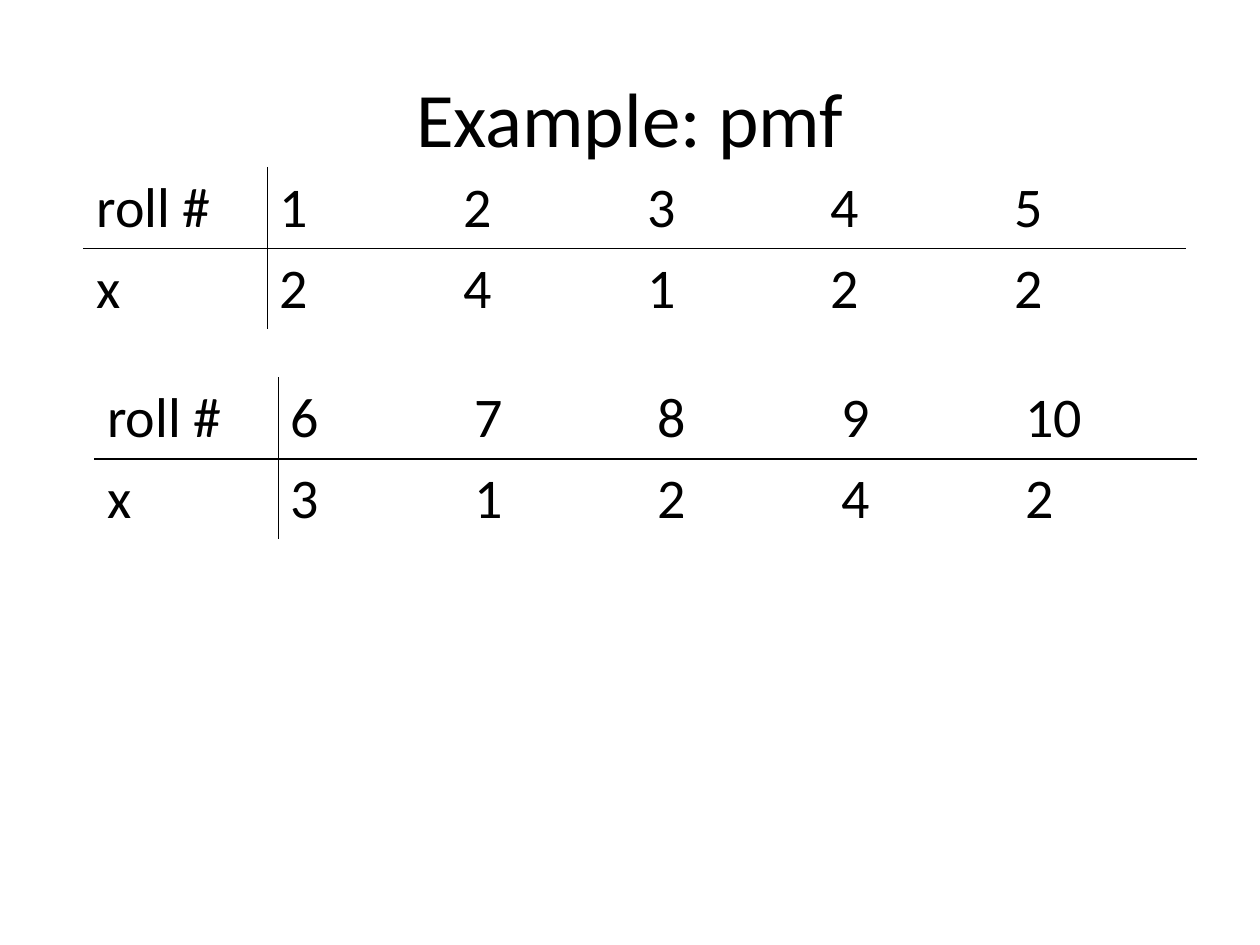
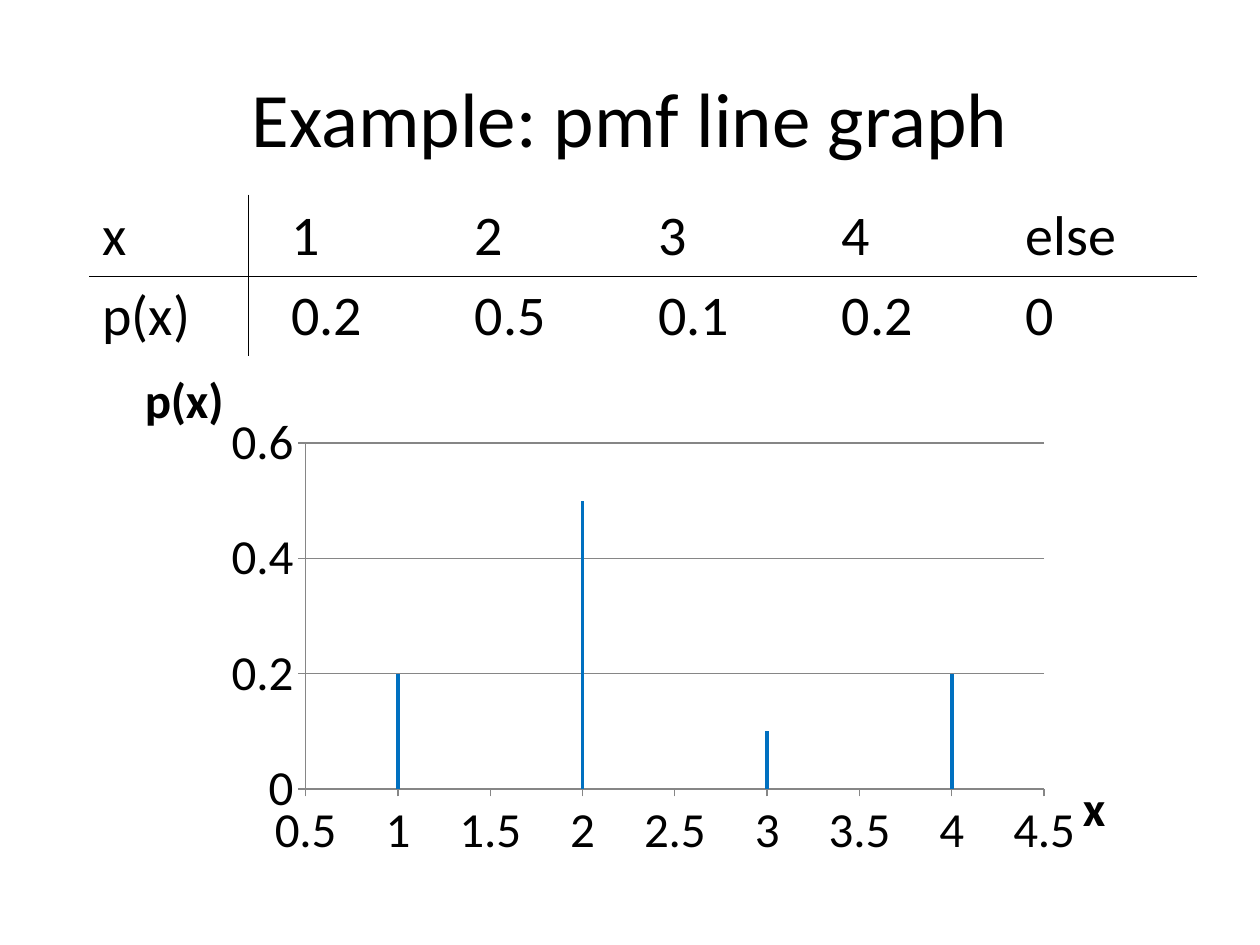
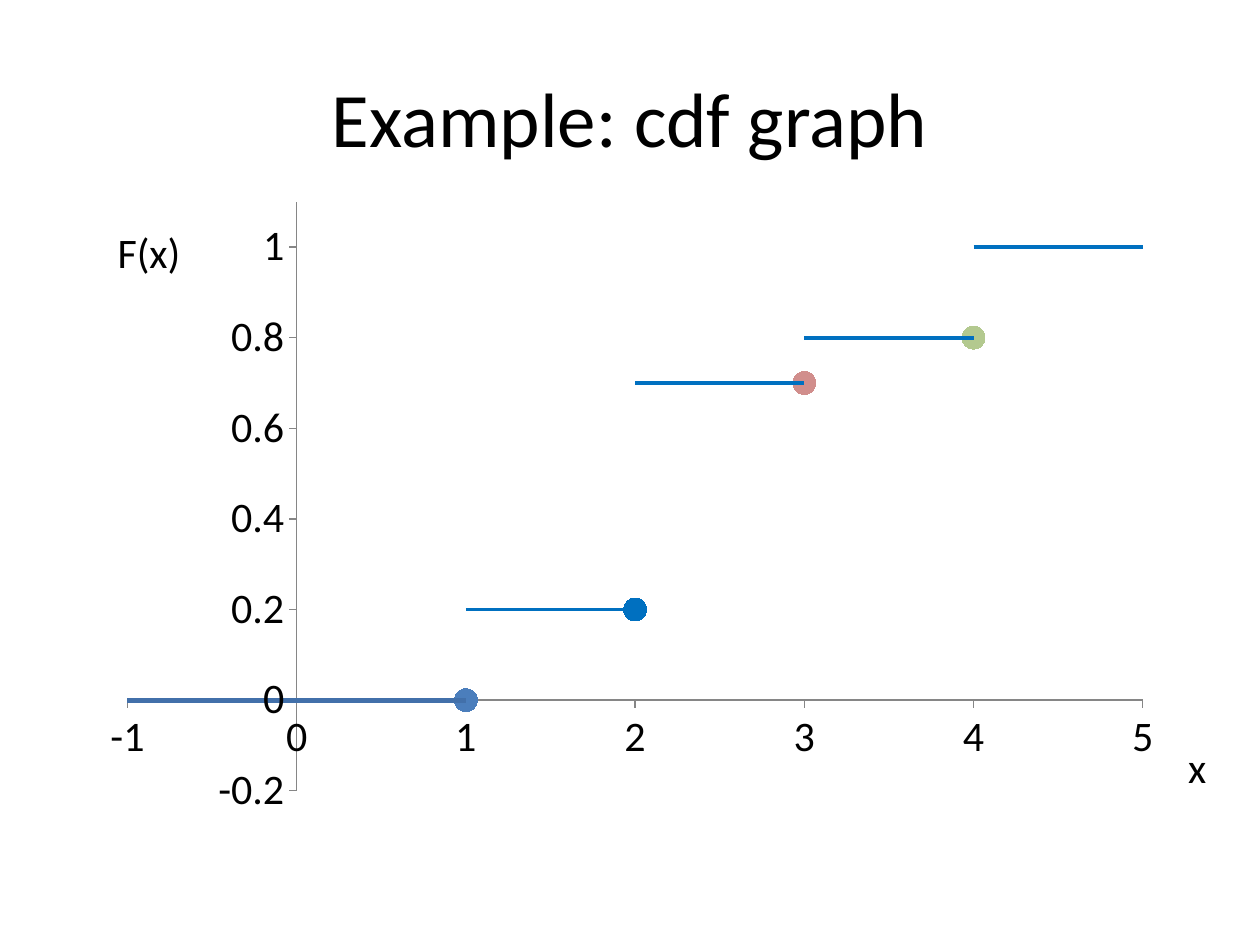
from lxml.etree import SubElement as Sub, Element as Elem
from pptx import Presentation as Deck
from pptx.chart.data import XyChartData as Data
from pptx.dml.color import RGBColor as RGB
from pptx.enum.chart import XL_CHART_TYPE as Kind, XL_MARKER_STYLE as Mark, XL_TICK_MARK as Tick
from pptx.enum.text import MSO_ANCHOR as Anchor, PP_ALIGN as Align
from pptx.oxml.ns import qn
from pptx.util import Cm, Pt

BLACK = RGB(0, 0, 0)
WHITE = RGB(255, 255, 255)
GREY = RGB(0x86, 0x86, 0x86)
BLUE = RGB(0x00, 0x70, 0xC0)
STEEL = RGB(0x42, 0x70, 0xAA)
DOT = RGB(0x4B, 0x7E, 0xBC)
ROSE = RGB(0xD1, 0x8E, 0x8C)
SAGE = RGB(0xB3, 0xC9, 0x8F)
FACE = "Calibri"
ROW = 1.63


def write(frame, text, size, align=Align.LEFT):
    """Fill a text frame with one paragraph in the deck's style."""
    para = frame.paragraphs[0]
    para.alignment = align
    run = para.add_run()
    run.text = text
    for key, val in {"name": FACE, "size": Pt(size)}.items():
        setattr(run.font, key, val)
    run.font.color.rgb = BLACK


def grid(slide, left, top, widths, rows):
    """Add a table with one rule under the head row and one after the first column."""
    frame = slide.shapes.add_table(len(rows), len(widths), Cm(left), Cm(top),
                                   Cm(sum(widths)), Cm(ROW * len(rows)))
    table = frame.table
    for flag in ("first_row", "horz_banding"):
        setattr(table, flag, False)
    for col, width in zip(table.columns, widths):
        col.width = Cm(width)
    for r, row in enumerate(rows):
        table.rows[r].height = Cm(ROW)
        for c, text in enumerate(row):
            cell = table.cell(r, c)
            cell.fill.background()
            if text:
                write(cell.text_frame, text, 32)
    # Cell borders
    for n, props in enumerate(frame.element.iter(qn("a:tcPr"))):
        r, c = divmod(n, len(widths))
        sides = {"L": c == 1, "R": c == 0, "T": r == 1, "B": r == 0}
        for i, (side, dark) in enumerate(sides.items()):
            line = Elem(qn("a:ln" + side), w=str(Pt(1)))
            fill = Sub(line, qn("a:solidFill"))
            Sub(fill, qn("a:srgbClr"), val=str(BLACK if dark else WHITE))
            props.insert(i, line)


deck = Deck()
deck.slide_width, deck.slide_height = Cm(25.4), Cm(19.05)

# Slides with their titles
slides = []
for head in ("Example: pmf", "Example: pmf line graph", "Example: cdf graph"):
    slide = deck.slides.add_slide(deck.slide_layouts[6])
    frame = slide.shapes.add_textbox(Cm(1.27), Cm(0.76), Cm(22.86), Cm(3.18)).text_frame
    for key, val in {"word_wrap": True, "vertical_anchor": Anchor.MIDDLE}.items():
        setattr(frame, key, val)
    write(frame, head, 44, Align.CENTER)
    slides.append(slide)
rolls, pmf, cdf = slides

# Charts: each series is (x values, y values, colour, line width or None for a dot)
plans = [
    {"slide": pmf, "at": (2.74, 6.99, 20.12, 11.43), "size": 28,
     "plot": (0.17, 0.17, 0.74, 0.61), "grid": True,
     "x": (0.5, 4.5, 0.5), "y": (0, 0.6, 0.2),
     "names": (("x", 0.94, 0.74), ("p(x)", 0, 0.02)),
     "rows": [([x, x], [0, p], BLUE, 2)
              for x, p in enumerate((0.2, 0.5, 0.1, 0.2), 1)]},
    {"slide": cdf, "at": (1.69, 3.81, 22.01, 12.91), "size": 24,
     "plot": (0.04, 0.02, 0.93, 0.92), "grid": False,
     "x": (-1, 5, 1), "y": (-0.2, 1.1, 0.2), "names": (),
     "rows": [([1, 2], [0.2, 0.2], BLUE, 2.25),
              ([2, 3], [0.7, 0.7], BLUE, 2.25),
              ([3, 4], [0.8, 0.8], BLUE, 2.25),
              ([4, 6], [1, 1], BLUE, 2.25),
              ([-5, 1], [0, 0], STEEL, 3),
              ([1], [0], DOT, None),
              ([2], [0.2], BLUE, None),
              ([3], [0.7], ROSE, None),
              ([4], [0.8], SAGE, None)]},
]
for plan in plans:
    data = Data()
    for n, (xs, ys, hue, width) in enumerate(plan["rows"], 1):
        line = data.add_series(f"Series {n}")
        for x, y in zip(xs, ys):
            line.add_data_point(x, y)
    chart = plan["slide"].shapes.add_chart(
        Kind.XY_SCATTER_LINES_NO_MARKERS, *map(Cm, plan["at"]), data).chart
    for key, val in {"has_legend": False, "has_title": False}.items():
        setattr(chart, key, val)
    for key, val in {"name": FACE, "size": Pt(plan["size"])}.items():
        setattr(chart.font, key, val)
    chart.font.color.rgb = BLACK
    chart.plots[0].vary_by_categories = False

    # Lines and end dots
    for line, (xs, ys, hue, width) in zip(chart.plots[0].series, plan["rows"]):
        line.smooth = False
        line.format.line.color.rgb = hue
        line.format.line.width = Pt(width or 0.75)
        if width is None:
            line.marker.style, line.marker.size = Mark.CIRCLE, 13
            line.marker.format.fill.solid()
            line.marker.format.fill.fore_color.rgb = hue
            line.marker.format.line.fill.background()

    # Axes
    axes = (chart.category_axis, chart.value_axis)
    for axis, (low, high, step) in zip(axes, (plan["x"], plan["y"])):
        look = {"minimum_scale": low, "maximum_scale": high, "major_unit": step,
                "major_tick_mark": Tick.OUTSIDE, "minor_tick_mark": Tick.NONE,
                "has_major_gridlines": False}
        for key, val in look.items():
            setattr(axis, key, val)
        axis.format.line.color.rgb = GREY
        axis.format.line.width = Pt(0.75)
    if plan["grid"]:
        rule = axes[1].major_gridlines.format.line
        rule.color.rgb, rule.width = GREY, Pt(0.75)

    # Places of the plot and the axis titles
    spots = [(chart.element.find(".//" + qn("c:plotArea")), 0, plan["plot"])]
    for axis, (text, x, y) in zip(axes, plan["names"]):
        title = axis.axis_title
        write(title.text_frame, text, plan["size"], Align.CENTER)
        title.text_frame.paragraphs[0].runs[0].font.bold = True
        title.element.find(".//" + qn("a:bodyPr")).set("rot", "0")
        spots.append((title.element, 1, (x, y)))
    for node, rank, box in spots:
        for old in node.findall(qn("c:layout")):
            node.remove(old)
        place = Elem(qn("c:layout"))
        node.insert(rank, place)
        hand = Sub(place, qn("c:manualLayout"))
        if len(box) == 4:
            Sub(hand, qn("c:layoutTarget"), val="inner")
        for tag in ("xMode", "yMode"):
            Sub(hand, qn("c:" + tag), val="edge")
        for tag, val in zip("xywh", box):
            Sub(hand, qn("c:" + tag), val=str(val))

# Tables
grid(rolls, 1.69, 3.38, [3.7] * 6,
     [["roll #", *"12345"], ["x", *"24122"]])
grid(rolls, 1.91, 7.62, [3.7] * 6,
     [["roll #", *"6789", "10"], ["x", *"31242"]])
grid(pmf, 1.81, 3.94, [3.2, 0.58] + [3.7] * 5,
     [["x", "", *"1234", "else"],
      ["p(x)", "", "0.2", "0.5", "0.1", "0.2", "0"]])

# Axis names on the cdf slide
for text, left, top, width in (("x", 23.7, 14.82, 0.9), ("F(x)", 2.12, 4.44, 1.8)):
    frame = cdf.shapes.add_textbox(Cm(left), Cm(top), Cm(width), Cm(1.28)).text_frame
    frame.word_wrap = False
    write(frame, text, 24)

deck.save("out.pptx")
